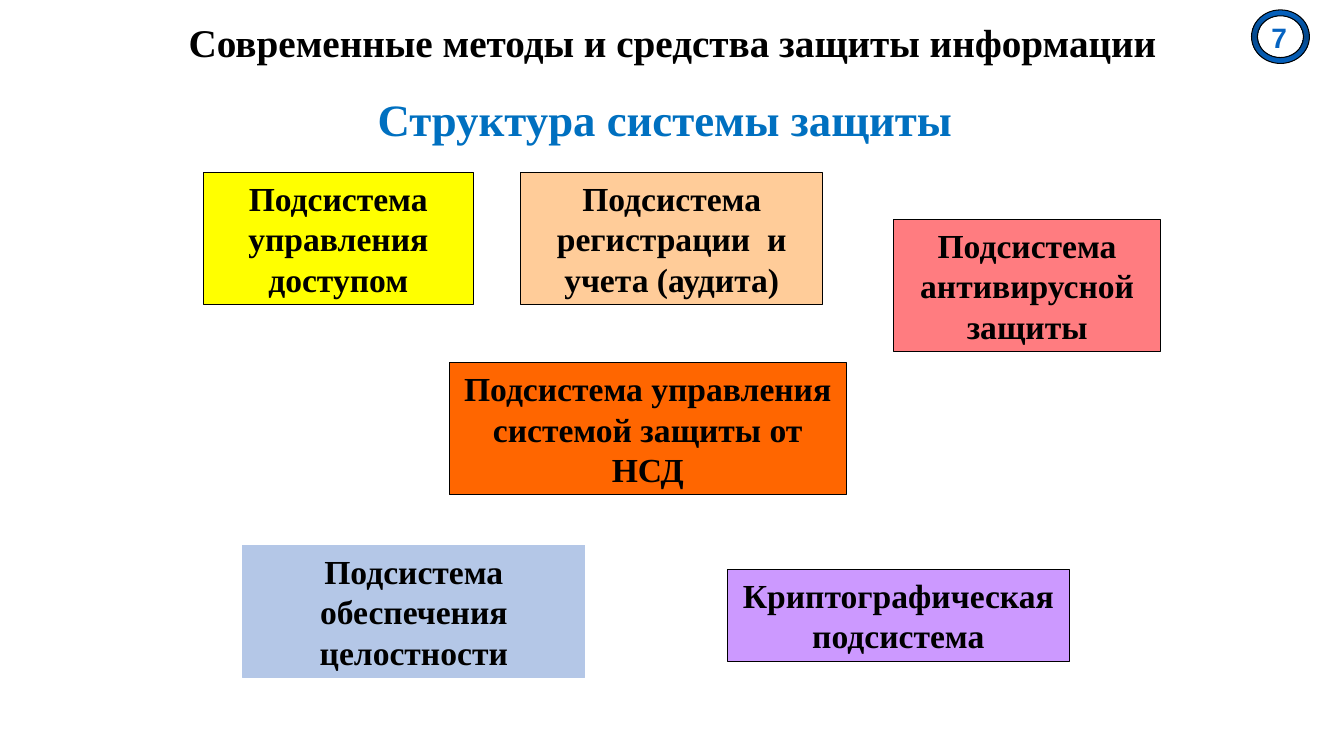
import copy

import pptx
import pptx.dml.color
import pptx.enum.dml
import pptx.enum.shapes
import pptx.enum.text
import pptx.util

Cm = pptx.util.Cm
Pt = pptx.util.Pt
Align = pptx.enum.text.PP_ALIGN
Anchor = pptx.enum.text.MSO_ANCHOR
Shapes = pptx.enum.shapes.MSO_SHAPE

COLORS = {
    "black": "000000",
    "heading": "0070C0",
    "badge": "0563C1",
    "badge_dark": "04478A",
    "yellow": "FFFF00",
    "peach": "FFCC99",
    "pink": "FF7C80",
    "orange": "FF6600",
    "blue": "B4C7E7",
    "violet": "CC99FF",
}
SERIF = "Times New Roman"
BOX_HEIGHTS = {2: 2.31, 3: 3.33}

TITLE = "Современные методы и средства защиты информации"
HEADING = "Структура системы защиты"
PAGE_NUMBER = "7"
SUBSYSTEMS = [
    ("Криптографическая подсистема", 18.33, 14.35, 8.62, 2, "violet", "black"),
    ("Подсистема управления доступом", 5.12, 4.34, 6.81, 3, "yellow", "black"),
    ("Подсистема регистрации  и учета (аудита)", 13.13, 4.34, 7.6, 3, "peach", "black"),
    ("Подсистема обеспечения целостности", 6.12, 13.74, 8.62, 3, "blue", "blue"),
    ("Подсистема антивирусной защиты", 22.53, 5.53, 6.71, 3, "pink", "black"),
    ("Подсистема управления системой защиты от НСД", 11.32, 9.14, 10.01, 3, "orange", "black"),
]


def rgb(name):
    return pptx.dml.color.RGBColor.from_string(COLORS[name])


def write(shape, text, size, color="black", font=SERIF, wrap=True):
    frame = shape.text_frame
    frame.word_wrap = wrap
    frame.vertical_anchor = Anchor.MIDDLE
    paragraph = frame.paragraphs[0]
    paragraph.text = text
    paragraph.alignment = Align.CENTER
    paragraph.font.name = font
    paragraph.font.size = Pt(size)
    paragraph.font.bold = True
    paragraph.font.color.rgb = rgb(color)
    return frame


def add_text(slide, place, text, size, **style):
    box = slide.shapes.add_textbox(*map(Cm, place))
    return write(box, text, size, **style)


def add_outlined(slide, kind, place, line_color):
    shape = slide.shapes.add_shape(kind, *map(Cm, place))
    shape.shadow.inherit = False
    shape.line.color.rgb = rgb(line_color)
    shape.line.width = Pt(0.75)
    return shape


def add_subsystem(slide, text, left, top, width, lines, fill, line):
    place = (left, top, width, BOX_HEIGHTS[lines])
    box = add_outlined(slide, Shapes.RECTANGLE, place, line)
    box.fill.solid()
    box.fill.fore_color.rgb = rgb(fill)
    write(box, text, 24)


def add_badge(slide):
    ring = add_outlined(slide, Shapes.DONUT, (31.54, 0.25, 1.46, 1.35), "black")
    ring.adjustments[0] = 0.11
    ring.fill.gradient()
    ring.fill.gradient_angle = 90
    stop_list = ring.fill._fill._gradFill.gsLst
    stop_list.append(copy.deepcopy(stop_list[-1]))
    stops = zip(ring.fill.gradient_stops, (0, 0.5, 1), ("badge", "badge_dark", "badge"))
    for stop, position, color in stops:
        stop.position = position
        stop.color.rgb = rgb(color)
    frame = add_text(slide, (31.83, 0.51, 0.81, 0.86), PAGE_NUMBER, 20, color="badge", font="Arial")
    frame.margin_left = frame.margin_right = frame.margin_top = frame.margin_bottom = 0


def main():
    presentation = pptx.Presentation()
    presentation.slide_width = Cm(33.87)
    presentation.slide_height = Cm(19.05)
    slide = presentation.slides.add_slide(presentation.slide_layouts[6])
    for subsystem in SUBSYSTEMS:
        add_subsystem(slide, *subsystem)
    title = add_text(slide, (2.34, 0.41, 29.21, 1.45), TITLE, 28)
    title.paragraphs[0].line_spacing = 0.9
    add_badge(slide)
    add_text(slide, (9.19, 2.18, 15.14, 1.63), HEADING, 32, color="heading", wrap=False)
    presentation.save("out.pptx")


if __name__ == "__main__":
    main()
